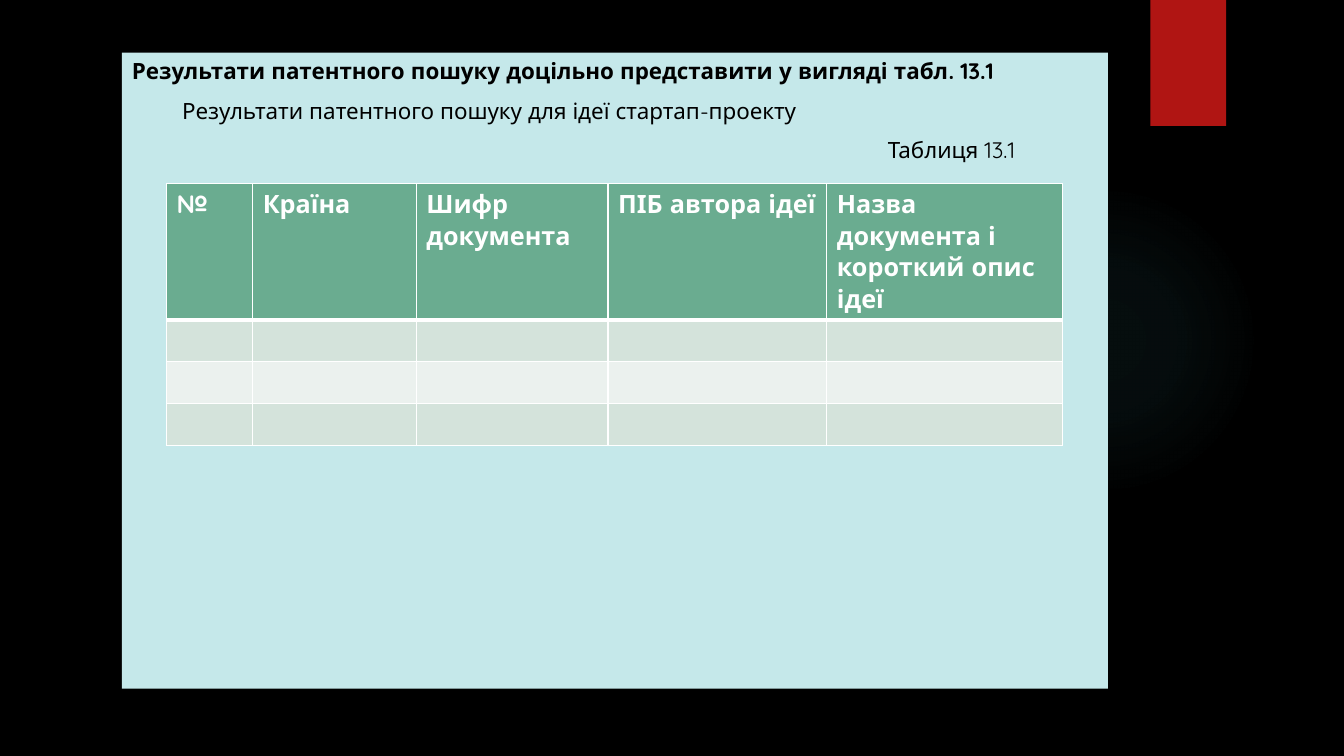
from lxml import etree
from pptx import Presentation
from pptx import util as u
from pptx.dml.color import RGBColor
from pptx.enum import shapes, text
from pptx.oxml import parse_xml
from pptx.oxml.ns import qn

FONT = "Quicksand"
COLORS = {
    "background": "000000", "glow": "50B9C1", "ribbon": "B01513",
    "panel": "C5E8EA", "ink": "000000", "white": "FFFFFF",
    "header": "6AAC90", "odd": "D4E3DB", "even": "EBF1EE",
}
NAMESPACE = "http://schemas.openxmlformats.org/drawingml/2006/main"

# Text, bold, left indent
PARAGRAPHS = [
    ("Результати патентного пошуку доцільно представити у вигляді табл. 13.1", True, 0),
    ("Результати патентного пошуку для ідеї стартап-проекту", False, 36),
    ("Таблиця 13.1", False, 540),
]
HEADINGS = ["№", "Країна", "Шифр документа", "ПІБ автора ідеї",
            "Назва документа і короткий опис ідеї"]
COLUMN_WIDTHS = [61.5, 116.9, 137, 156.2, 168.6]
ROW_HEIGHTS = [97.5, 30, 30, 30]


def color(name):
    return RGBColor.from_string(COLORS[name])


def add_block(page, kind, left, top, width, height, fill=None):
    box = page.shapes.add_shape(kind, *map(u.Pt, (left, top, width, height)))
    box.shadow.inherit = False
    box.line.fill.background()
    if fill:
        box.fill.solid()
        box.fill.fore_color.rgb = color(fill)
    return box


def add_glow(page, left, top, size):
    glow = add_block(page, shapes.MSO_SHAPE.OVAL, left, top, size, size)
    stops = "".join(
        f'<a:gs pos="{place}000"><a:srgbClr val="{COLORS["glow"]}">'
        f'<a:alpha val="{alpha}000"/></a:srgbClr></a:gs>'
        for place, alpha in [(0, 7), (36, 6), (69, 0)])
    gradient = parse_xml(
        f'<a:gradFill xmlns:a="{NAMESPACE}"><a:gsLst>{stops}</a:gsLst>'
        '<a:path path="circle"><a:fillToRect l="50000" t="50000" r="50000" b="50000"/>'
        '</a:path></a:gradFill>')
    glow.element.spPr.find(qn("a:prstGeom")).addnext(gradient)


def write(para, words, size, ink, bold):
    span = para.add_run()
    span.text = words
    span.font.color.rgb = color(ink)
    for name, value in {"name": FONT, "size": u.Pt(size), "bold": bold}.items():
        setattr(span.font, name, value)


def add_panel(page):
    panel = add_block(page, shapes.MSO_SHAPE.RECTANGLE, 87.1, 37.6, 704.3, 454.3, "panel")
    frame = panel.text_frame
    frame.word_wrap = True
    frame.vertical_anchor = text.MSO_ANCHOR.TOP
    for index, (words, bold, indent) in enumerate(PARAGRAPHS):
        para = frame.add_paragraph() if index else frame.paragraphs[0]
        para.alignment = text.PP_ALIGN.JUSTIFY
        para.space_before = u.Pt(9 if index else 0)
        para._p.get_or_add_pPr().set("marL", str(u.Pt(indent)))
        write(para, words, 16, "ink", bold)


def set_borders(cell, widths):
    properties = cell._tc.get_or_add_tcPr()
    for index, (side, width) in enumerate(widths.items()):
        line = etree.Element(qn(f"a:ln{side}"), w=str(u.Pt(width)))
        fill = etree.SubElement(line, qn("a:solidFill"))
        etree.SubElement(fill, qn("a:srgbClr"), val=COLORS["white"])
        properties.insert(index, line)


def add_patent_table(page):
    rows, columns = len(ROW_HEIGHTS), len(COLUMN_WIDTHS)
    table = page.shapes.add_table(
        rows, columns, u.Pt(119), u.Pt(131),
        u.Pt(sum(COLUMN_WIDTHS)), u.Pt(sum(ROW_HEIGHTS))).table
    for column, width in zip(table.columns, COLUMN_WIDTHS):
        column.width = u.Pt(width)
    for number, (row, height) in enumerate(zip(table.rows, ROW_HEIGHTS)):
        row.height = u.Pt(height)
        shade = "header" if number == 0 else "odd" if number % 2 else "even"
        for cell, heading in zip(row.cells, HEADINGS):
            cell.fill.solid()
            cell.fill.fore_color.rgb = color(shade)
            set_borders(cell, {"L": 1, "R": 1, "T": 3 if number == 1 else 1,
                               "B": 3 if number == 0 else 1})
            if number == 0:
                write(cell.text_frame.paragraphs[0], heading, 18, "white", True)


def main():
    deck = Presentation()
    deck.slide_width, deck.slide_height = u.Pt(960), u.Pt(540)
    page = deck.slides.add_slide(deck.slide_layouts[6])
    page.background.fill.solid()
    page.background.fill.fore_color.rgb = color("background")

    # Decoration
    add_glow(page, 677.5, 131.8, 221.8)
    add_block(page, shapes.MSO_SHAPE.RECTANGLE, 821.8, 0, 54, 90, "ribbon")

    # Content
    add_panel(page)
    add_patent_table(page)
    deck.save("out.pptx")


if __name__ == "__main__":
    main()
